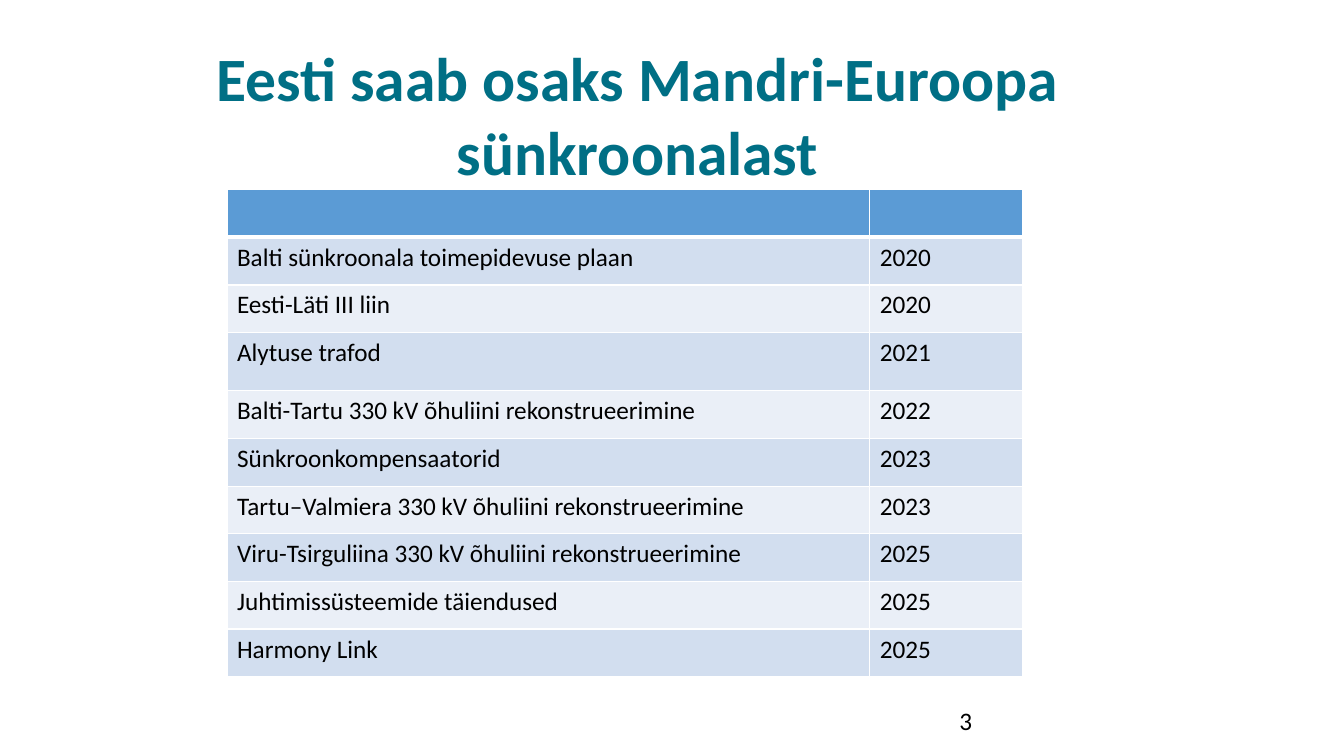
from dataclasses import dataclass

from lxml import etree
from pptx import Presentation
from pptx.dml.color import RGBColor
from pptx.enum.text import MSO_ANCHOR, MSO_AUTO_SIZE, PP_ALIGN
from pptx.oxml.ns import qn
from pptx.util import Cm, Pt

TOP = MSO_ANCHOR.TOP
NO_AUTOFIT = MSO_AUTO_SIZE.NONE
LEFT = PP_ALIGN.LEFT
CENTER = PP_ALIGN.CENTER
TITLE_ONLY = 5


@dataclass(frozen=True)
class Theme:
    font: str = "Calibri"
    title_color: str = "006F85"
    text_color: str = "000000"
    header_fill: str = "5B9BD5"
    band_fills: tuple = ("D2DEEF", "EAEFF7")
    border_color: str = "FFFFFF"
    title_size: int = 44
    text_size: int = 18
    border_width: int = 1
    header_border_width: int = 3


THEME = Theme()

PROJECTS = [
    ("Balti sünkroonala toimepidevuse plaan", "2020"),
    ("Eesti-Läti III liin", "2020"),
    ("Alytuse trafod", "2021"),
    ("Balti-Tartu 330 kV õhuliini rekonstrueerimine", "2022"),
    ("Sünkroonkompensaatorid", "2023"),
    ("Tartu–Valmiera 330 kV õhuliini rekonstrueerimine", "2023"),
    ("Viru-Tsirguliina 330 kV õhuliini rekonstrueerimine", "2025"),
    ("Juhtimissüsteemide täiendused", "2025"),
    ("Harmony Link", "2025"),
]
COLUMN_WIDTHS = (Cm(16.2), Cm(3.86))
ROW_HEIGHT = Cm(1.2)
TALL_ROW_HEIGHT = Cm(1.47)
TALL_ROW = 3


def write_text(frame, text, size=THEME.text_size, color=THEME.text_color,
               bold=False, align=LEFT):
    frame.word_wrap = True
    frame.vertical_anchor = TOP
    paragraph = frame.paragraphs[0]
    paragraph.text = text
    paragraph.alignment = align
    font = paragraph.font
    font.name = THEME.font
    font.size = Pt(size)
    font.bold = bold
    font.color.rgb = RGBColor.from_string(color)


def add_title(slide, text):
    title = slide.shapes.title
    title.left, title.top = Cm(4.06), Cm(0.89)
    title.width, title.height = Cm(24.03), Cm(2.64)
    title.text_frame.auto_size = NO_AUTOFIT
    write_text(title.text_frame, text, size=THEME.title_size,
               color=THEME.title_color, bold=True, align=CENTER)


def add_border(cell, side, width):
    properties = cell._tc.get_or_add_tcPr()
    line = etree.SubElement(properties, qn(f"a:ln{side}"), w=str(Pt(width)))
    fill = etree.SubElement(line, qn("a:solidFill"))
    etree.SubElement(fill, qn("a:srgbClr"), val=THEME.border_color)


def format_cell(cell, text, row_index):
    write_text(cell.text_frame, text)
    for side in "LRTB":
        under_header = (row_index, side) in ((0, "B"), (1, "T"))
        add_border(cell, side, THEME.header_border_width if under_header
                   else THEME.border_width)
    color = THEME.band_fills[(row_index - 1) % 2] if row_index else THEME.header_fill
    cell.fill.solid()
    cell.fill.fore_color.rgb = RGBColor.from_string(color)


def add_project_table(slide, projects):
    rows = [("", ""), *projects]
    table = slide.shapes.add_table(
        len(rows), len(COLUMN_WIDTHS), Cm(5.72), Cm(4.78),
        sum(COLUMN_WIDTHS), ROW_HEIGHT * len(rows)).table
    for column, width in zip(table.columns, COLUMN_WIDTHS):
        column.width = width
    for row_index, values in enumerate(rows):
        row = table.rows[row_index]
        row.height = TALL_ROW_HEIGHT if row_index == TALL_ROW else ROW_HEIGHT
        for cell, value in zip(row.cells, values):
            format_cell(cell, value, row_index)


def add_page_number(slide, number):
    box = slide.shapes.add_textbox(Cm(23.93), Cm(17.65), Cm(7.62), Cm(1.02))
    write_text(box.text_frame, number)


def main():
    presentation = Presentation()
    presentation.slide_width = Cm(33.87)
    presentation.slide_height = Cm(19.05)
    slide = presentation.slides.add_slide(presentation.slide_layouts[TITLE_ONLY])
    add_title(slide, "Eesti saab osaks Mandri-Euroopa sünkroonalast")
    add_project_table(slide, PROJECTS)
    add_page_number(slide, "3")
    presentation.save("out.pptx")


if __name__ == "__main__":
    main()
